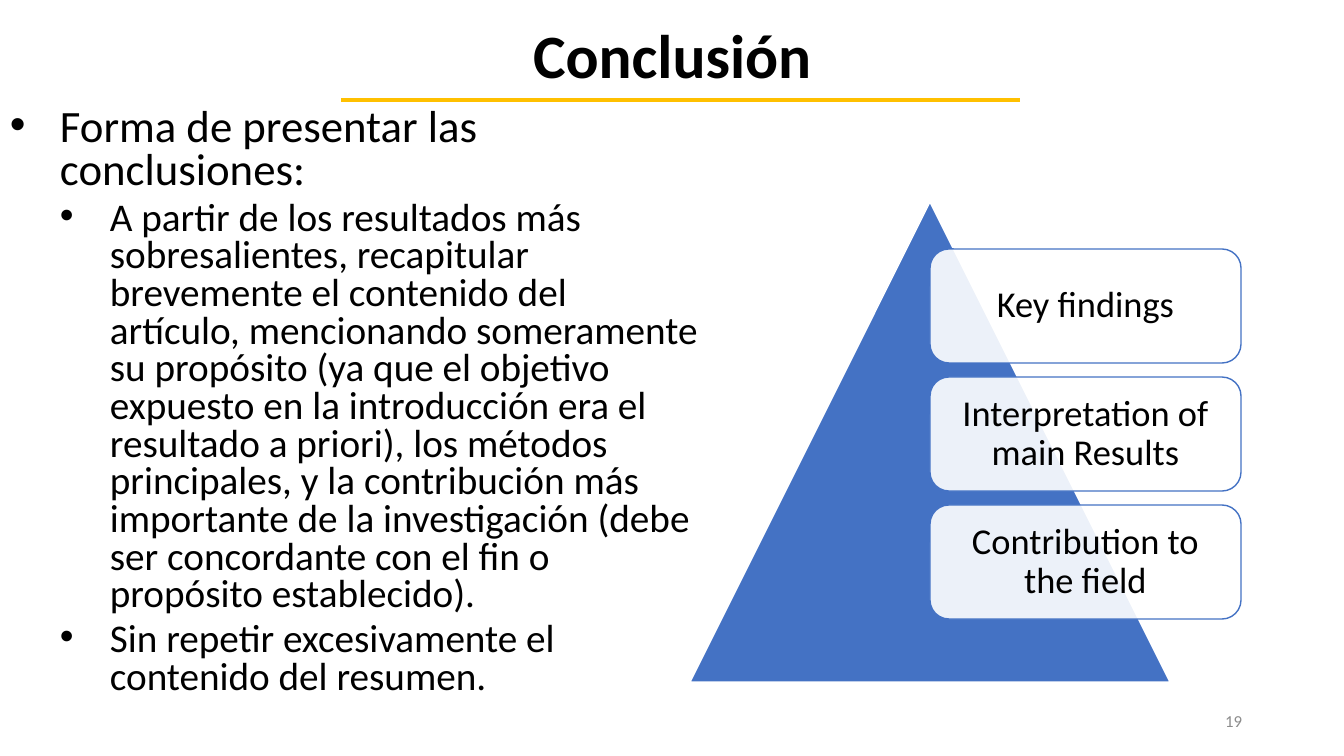
from dataclasses import dataclass
from lxml import etree
from pptx import Presentation
from pptx import util as u
from pptx.dml.color import RGBColor
from pptx.enum import shapes, text
from pptx.oxml import ns

# Content
TITLE = "Conclusión"
NUMBER = "19"
POINTS = [
    (0, "Forma de presentar las conclusiones:"),
    (1, "A partir de los resultados más sobresalientes, recapitular brevemente "
        "el contenido del artículo, mencionando someramente su propósito (ya que "
        "el objetivo expuesto en la introducción era el resultado a priori), los "
        "métodos principales, y la contribución más importante de la investigación "
        "(debe ser concordante con el fin o propósito establecido)."),
    (1, "Sin repetir excesivamente el contenido del resumen."),
]
LABELS = ["Key findings", "Interpretation of main Results", "Contribution to the field"]


@dataclass(frozen=True)
class Theme:
    font: str = "Calibri"
    ink: str = "000000"
    gray: str = "8C8C8C"
    blue: str = "4472C4"
    white: str = "FFFFFF"
    gold: str = "FFC000"
    title: int = 44
    levels: tuple = (32, 28)
    label: int = 26
    small: int = 12


T = Theme()
SCALE = 914400 / 100.8
INDENT = 50


def px(n):
    return u.Emu(round(n * SCALE))


def rgb(code):
    return RGBColor.from_string(code)


def style(para, words, size, align, color=T.ink, bold=False, space=None):
    para.text = words
    para.alignment = align
    para.line_spacing = space
    font = para.font
    font.name, font.size, font.bold = T.font, u.Pt(size), bold
    font.color.rgb = rgb(color)


def text_box(area, anchor):
    frame = slide.shapes.add_textbox(*map(px, area)).text_frame
    frame.word_wrap = True
    frame.vertical_anchor = anchor
    return frame


def add_shape(kind, area, fill, line):
    shape = slide.shapes.add_shape(kind, *map(px, area))
    shape.shadow.inherit = False
    shape.fill.solid()
    shape.fill.fore_color.rgb = rgb(fill)
    shape.line.color.rgb = rgb(line)
    shape.line.width = u.Pt(1)
    return shape


deck = Presentation()
deck.slide_width, deck.slide_height = px(1344), px(756)
slide = deck.slides.add_slide(deck.slide_layouts[6])
ALIGN, ANCHOR, KIND = text.PP_ALIGN, text.MSO_ANCHOR, shapes.MSO_SHAPE

# Title
frame = text_box((93, 15, 1159, 88), ANCHOR.MIDDLE)
style(frame.paragraphs[0], TITLE, T.title, ALIGN.CENTER, bold=True, space=0.9)

# Bullet list
frame = text_box((0, 103, 712, 653), ANCHOR.TOP)
for i, (level, words) in enumerate(POINTS):
    para = frame.paragraphs[0] if i == 0 else frame.add_paragraph()
    style(para, words, T.levels[level], ALIGN.LEFT, space=0.8)
    para.level = level
    para.space_before = u.Pt(5 if level else 10)
    props = para._p.get_or_add_pPr()
    props.set("marL", str(px(INDENT * (level + 1))))
    props.set("indent", str(px(-INDENT)))
    face = etree.Element(ns.qn("a:buFont"), typeface="Arial")
    mark = etree.Element(ns.qn("a:buChar"), char="•")
    props.find(ns.qn("a:defRPr")).addprevious(face)
    face.addnext(mark)

# Slide number
frame = text_box((950, 701, 302, 40), ANCHOR.MIDDLE)
style(frame.paragraphs[0], NUMBER, T.small, ALIGN.RIGHT, T.gray)

# Pyramid with its labels
add_shape(KIND.ISOSCELES_TRIANGLE, (690, 202, 480, 480), T.blue, T.white)
LEFT, TOP, WIDE, HIGH, GAP, INSET = 930, 249, 311, 114, 14, 16
for i, words in enumerate(LABELS):
    area = (LEFT, TOP + i * (HIGH + GAP), WIDE, HIGH)
    card = add_shape(KIND.ROUNDED_RECTANGLE, area, T.white, T.blue)
    tint = card.fill._xPr.find(ns.qn("a:solidFill"))[0]
    etree.SubElement(tint, ns.qn("a:alpha"), val="90000")
    frame = card.text_frame
    frame.word_wrap = True
    frame.vertical_anchor = ANCHOR.MIDDLE
    frame.margin_left = frame.margin_right = px(INSET)
    frame.margin_top = frame.margin_bottom = px(INSET)
    style(frame.paragraphs[0], words, T.label, ALIGN.CENTER, space=0.9)

# Rule under the title
rule = slide.shapes.add_connector(
    shapes.MSO_CONNECTOR.STRAIGHT, px(341), px(100), px(1020), px(100))
rule.line.color.rgb = rgb(T.gold)
rule.line.width = u.Pt(3)
etree.SubElement(rule._element.spPr, ns.qn("a:effectLst"))

deck.save("out.pptx")
